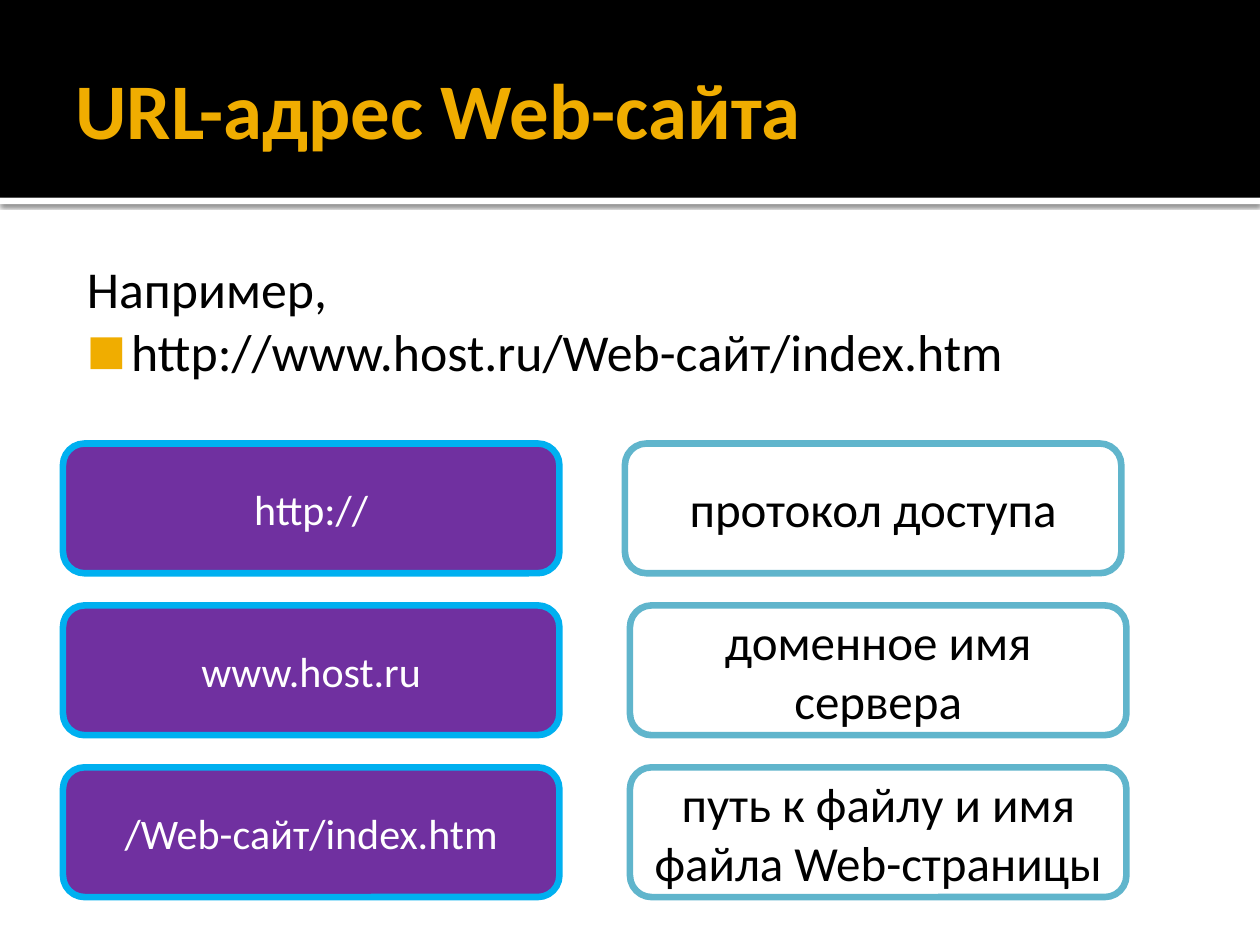
"""Build a slide that explains the parts of a website URL."""
from lxml import etree
from pptx import Presentation
from pptx import util as u
from pptx.dml.color import RGBColor
from pptx.enum import shapes, text
from pptx.oxml import ns

COLORS = {
    "black": "000000", "white": "FFFFFF", "amber": "F0AD00",
    "purple": "7030A0", "sky": "00B0F0", "teal": "60B5CC",
}
FONT = "Calibri"
MARGIN = 0.5
ROW_TOP, ROW_STEP = 3.52, 1.285
BOX_WIDTH, BOX_HEIGHT = 3.94, 1.03
URL_PARTS = [
    ("http://", "протокол доступа", 4.96),
    ("www.host.ru", "доменное имя сервера", 5),
    ("/Web-сайт/index.htm", "путь к файлу и имя файла Web-страницы", 5),
]


def rgb(name):
    return RGBColor.from_string(COLORS[name])


def add_xml(parent, tag, **attributes):
    return etree.SubElement(parent, ns.qn(tag), attributes)


def format_runs(paragraph, size, color, bold=False):
    for run in paragraph.runs:
        run.font.name = FONT
        run.font.size = u.Pt(size)
        run.font.bold = bold
        run.font.color.rgb = rgb(color)


def add_band(slide, top, height, color):
    """Add a full-width band behind the placeholders."""
    band = slide.shapes.add_shape(
        shapes.MSO_SHAPE.RECTANGLE, 0, u.Inches(top), u.Inches(10), u.Inches(height))
    band.shadow.inherit = False
    band.fill.solid()
    band.fill.fore_color.rgb = rgb(color)
    band.line.fill.background()
    slide.shapes._spTree.insert(2, band._element)
    return band


def add_soft_shadow(band):
    effects = band._element.spPr.find(ns.qn("a:effectLst"))
    shadow = add_xml(effects, "a:outerShdw", blurRad=str(u.Pt(2.5)),
                     dist=str(u.Pt(0.8)), dir="5400000", rotWithShape="0")
    shade = add_xml(shadow, "a:srgbClr", val=COLORS["black"])
    add_xml(shade, "a:alpha", val="60000")


def place(placeholder, top, height, insets):
    """Move a placeholder and return its text frame."""
    placeholder.left, placeholder.top = u.Inches(MARGIN), u.Inches(top)
    placeholder.width, placeholder.height = u.Inches(9), u.Inches(height)
    frame = placeholder.text_frame
    frame.auto_size = text.MSO_AUTO_SIZE.NONE
    frame.margin_left, frame.margin_top, frame.margin_right, frame.margin_bottom = map(
        u.Inches, insets)
    return frame


def fill_title(slide):
    frame = place(slide.shapes.title, 0.17, 1.37, (0.1, 0.05, 0.05, 0.05))
    frame.text = "URL-адрес Web-сайта"
    frame.vertical_anchor = text.MSO_ANCHOR.MIDDLE
    heading = frame.paragraphs[0]
    heading.alignment = text.PP_ALIGN.LEFT
    format_runs(heading, 45, "amber", bold=True)


def fill_example(slide):
    frame = place(slide.placeholders[1], 1.94, 1.07, (0.06, 0.1, 0.1, 0.05))
    frame.text = "Например,\nhttp://www.host.ru/Web-сайт/index.htm"
    intro, address = frame.paragraphs
    for paragraph, margin, indent in ((intro, 0.13, 0), (address, 0.48, -0.35)):
        paragraph.space_before = u.Pt(0)
        format_runs(paragraph, 29.6, "black")
        properties = paragraph._p.get_or_add_pPr()
        properties.set("marL", str(u.Inches(margin)))
        properties.set("indent", str(u.Inches(indent)))
    add_xml(intro._p.pPr, "a:buNone")
    bullet = address._p.pPr
    add_xml(add_xml(bullet, "a:buClr"), "a:srgbClr", val=COLORS["amber"])
    add_xml(bullet, "a:buSzPct", val="80000")
    add_xml(bullet, "a:buFont", typeface=FONT)
    add_xml(bullet, "a:buChar", char="■")


def add_box(slide, left, row, label, size, fill, outline, ink):
    """Add a rounded box with a centred label in the given row."""
    box = slide.shapes.add_shape(
        shapes.MSO_SHAPE.ROUNDED_RECTANGLE, u.Inches(left),
        u.Inches(ROW_TOP + row * ROW_STEP), u.Inches(BOX_WIDTH), u.Inches(BOX_HEIGHT))
    box.shadow.inherit = False
    box.fill.solid()
    box.fill.fore_color.rgb = rgb(fill)
    box.line.color.rgb = rgb(outline)
    box.line.width = u.Pt(3.78)
    frame = box.text_frame
    frame.word_wrap = True
    frame.vertical_anchor = text.MSO_ANCHOR.MIDDLE
    frame.text = label
    frame.paragraphs[0].alignment = text.PP_ALIGN.CENTER
    format_runs(frame.paragraphs[0], size, ink)


def main():
    deck = Presentation()
    deck.slide_width, deck.slide_height = u.Inches(10), u.Inches(7.5)
    slide = deck.slides.add_slide(deck.slide_layouts[1])
    add_band(slide, 0, 1.57, "black")
    add_soft_shadow(add_band(slide, 1.57, 0.05, "white"))
    fill_title(slide)
    fill_example(slide)
    for row, (part, meaning, meaning_left) in enumerate(URL_PARTS):
        add_box(slide, MARGIN, row, part, 24, "purple", "sky", "white")
        add_box(slide, meaning_left, row, meaning, 28, "white", "teal", "black")
    deck.save("out.pptx")


if __name__ == "__main__":
    main()
